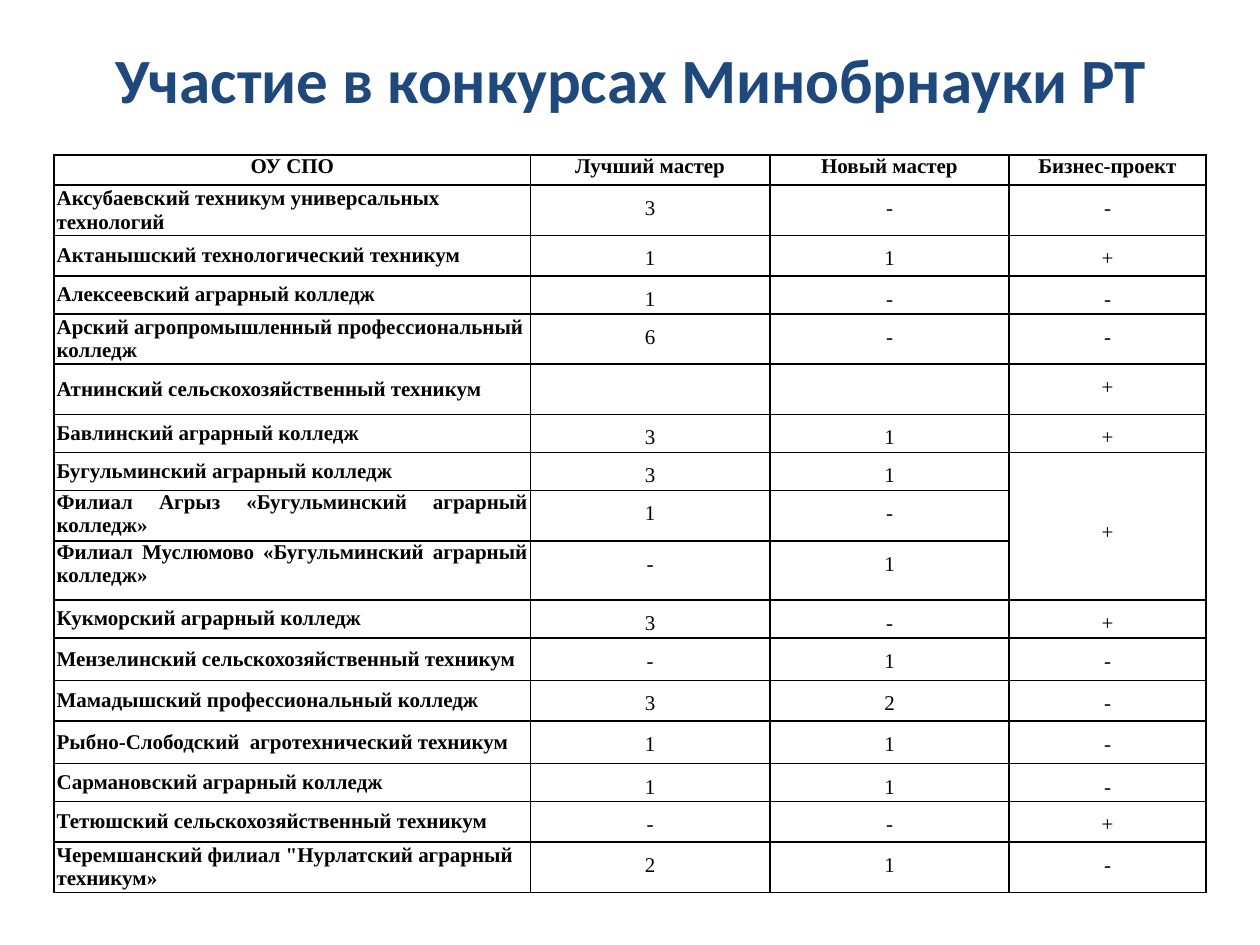
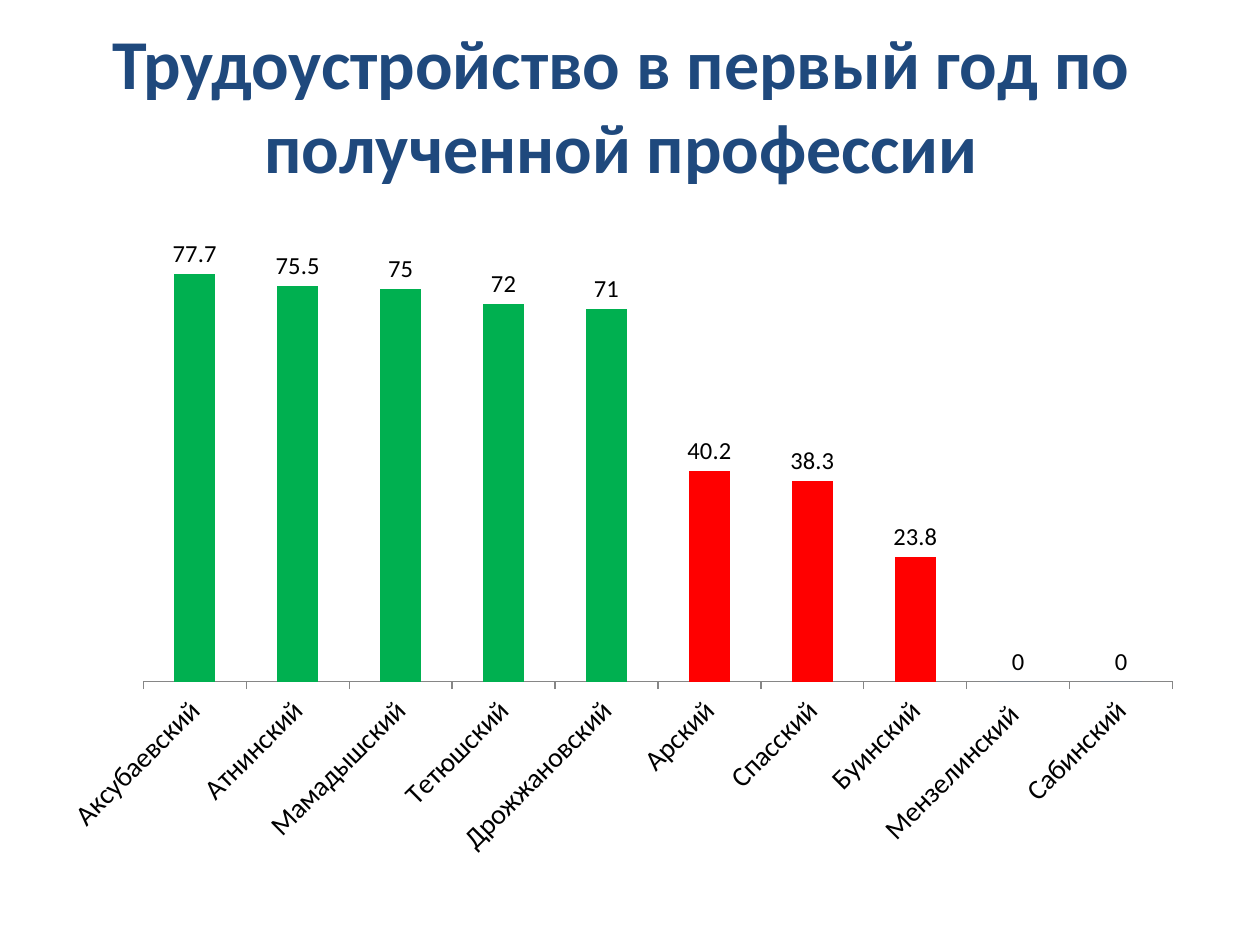
from lxml import etree
from pptx import Presentation
from pptx.chart.data import CategoryChartData
from pptx.dml.color import RGBColor
from pptx.enum.chart import XL_CHART_TYPE, XL_LABEL_POSITION, XL_TICK_MARK
from pptx.enum.text import MSO_ANCHOR, PP_ALIGN
from pptx.oxml.ns import qn
from pptx.util import Inches, Pt

COLUMN = XL_CHART_TYPE.COLUMN_CLUSTERED
OUTSIDE_END = XL_LABEL_POSITION.OUTSIDE_END
TICK_OUT, TICK_NONE = XL_TICK_MARK.OUTSIDE, XL_TICK_MARK.NONE
TOP, MIDDLE = MSO_ANCHOR.TOP, MSO_ANCHOR.MIDDLE
LEFT, CENTER, JUSTIFY = PP_ALIGN.LEFT, PP_ALIGN.CENTER, PP_ALIGN.JUSTIFY

TITLE_FONT, TABLE_FONT = "Calibri", "Times New Roman"
NAVY, BLACK, GREY = "1F497D", "000000", "868686"
BLUE, GREEN, RED = "4F81BD", "00B050", "FF0000"

COLUMN_WIDTHS = [3.78, 1.9, 1.9, 1.56]
HEADERS = ["ОУ СПО", "Лучший мастер", "Новый мастер", "Бизнес-проект"]
HEADER_HEIGHT = 0.24
# Row height, institution, then one result for each contest
CONTEST_ROWS = [
    (0.4, "Аксубаевский техникум универсальных технологий", "3", "-", "-"),
    (0.32, "Актанышский технологический техникум", "1", "1", "+"),
    (0.24, "Алексеевский аграрный колледж", "1", "-", "-"),
    (0.34, "Арский агропромышленный профессиональный колледж", "6", "-", "-"),
    (0.4, "Атнинский сельскохозяйственный техникум", "", "", "+"),
    (0.24, "Бавлинский аграрный колледж", "3", "1", "+"),
    (0.24, "Бугульминский аграрный колледж", "3", "1", "+"),
    (0.34, "Филиал Агрыз «Бугульминский аграрный колледж»", "1", "-", ""),
    (0.47, "Филиал Муслюмово «Бугульминский аграрный колледж»", "-", "1", ""),
    (0.24, "Кукморский аграрный колледж", "3", "-", "+"),
    (0.34, "Мензелинский сельскохозяйственный техникум", "-", "1", "-"),
    (0.32, "Мамадышский профессиональный колледж", "3", "2", "-"),
    (0.34, "Рыбно-Слободский  агротехнический техникум", "1", "1", "-"),
    (0.24, "Сармановский аграрный колледж", "1", "1", "-"),
    (0.32, "Тетюшский сельскохозяйственный техникум", "-", "-", "+"),
    (0.34, "Черемшанский филиал \"Нурлатский аграрный техникум»", "2", "1", "-"),
]
# First and last row of the project result shared by a college and its branches
SHARED_ROWS = (7, 9)

EMPLOYMENT = {
    "Аксубаевский": 77.7, "Атнинский": 75.5, "Мамадышский": 75,
    "Тетюшский": 72, "Дрожжановский": 71, "Арский": 40.2,
    "Спасский": 38.3, "Буинский": 23.8, "Мензелинский ": 0, "Сабинский": 0,
}
HIGH_EMPLOYMENT = 70


def color(value):
    return RGBColor.from_string(value)


def set_attributes(target, values):
    for name, value in values.items():
        setattr(target, name, value)


def set_font(font, name, size, value=BLACK, bold=False):
    set_attributes(font, {"name": name, "size": Pt(size), "bold": bold})
    font.color.rgb = color(value)


def add_title(slide, box, text, size):
    shape = slide.shapes.add_textbox(*map(Inches, box))
    set_attributes(shape.text_frame, {"word_wrap": True, "vertical_anchor": MIDDLE})
    paragraph = shape.text_frame.paragraphs[0]
    paragraph.alignment = CENTER
    run = paragraph.add_run()
    run.text = text
    set_font(run.font, TITLE_FONT, size, NAVY, True)


def add_borders(cell):
    properties = cell._tc.get_or_add_tcPr()
    for side in ("a:lnL", "a:lnR", "a:lnT", "a:lnB"):
        line = etree.SubElement(properties, qn(side), w=str(Pt(1)))
        fill = etree.SubElement(line, qn("a:solidFill"))
        etree.SubElement(fill, qn("a:srgbClr"), val=BLACK)


def format_cell(cell, text, alignment, anchor=TOP, bold=False, spacing=1.0):
    add_borders(cell)
    cell.fill.background()
    set_attributes(cell, {
        "margin_left": Inches(0.02), "margin_right": Inches(0.02),
        "margin_top": 0, "margin_bottom": 0, "vertical_anchor": anchor,
    })
    paragraph = cell.text_frame.paragraphs[0]
    set_attributes(paragraph, {"alignment": alignment, "line_spacing": spacing})
    set_font(paragraph.font, TABLE_FONT, 12)
    if text:
        run = paragraph.add_run()
        run.text = text
        set_font(run.font, TABLE_FONT, 12, BLACK, bold)


def add_contest_table(slide, left, top):
    heights = [HEADER_HEIGHT] + [row[0] for row in CONTEST_ROWS]
    table = slide.shapes.add_table(
        len(heights), len(HEADERS), Inches(left), Inches(top),
        Inches(sum(COLUMN_WIDTHS)), Inches(sum(heights))).table
    set_attributes(table, {"first_row": False, "horz_banding": False})
    for column, width in zip(table.columns, COLUMN_WIDTHS):
        column.width = Inches(width)
    for row, height in zip(table.rows, heights):
        row.height = Inches(height)

    # Header
    for index, header in enumerate(HEADERS):
        format_cell(table.cell(0, index), header, CENTER, bold=True)

    # Institutions and their results
    first, last = SHARED_ROWS
    for row, (_, institution, *results) in enumerate(CONTEST_ROWS, 1):
        branch = institution.startswith("Филиал")
        format_cell(table.cell(row, 0), institution, JUSTIFY if branch else LEFT,
                    TOP if branch else MIDDLE, bold=True)
        for index, result in enumerate(results, 1):
            shared = index == len(results) and first <= row <= last
            format_cell(table.cell(row, index), result, CENTER,
                        MIDDLE if shared else TOP, spacing=1.5)
    table.cell(first, len(HEADERS) - 1).merge(table.cell(last, len(HEADERS) - 1))


def add_employment_chart(slide, box):
    data = CategoryChartData()
    data.categories = list(EMPLOYMENT)
    data.add_series("Series 1", list(EMPLOYMENT.values()))
    chart = slide.shapes.add_chart(COLUMN, *map(Inches, box), data).chart
    set_attributes(chart, {"has_legend": False, "has_title": False})
    set_font(chart.font, TITLE_FONT, 10)

    # Axes
    chart.value_axis.visible = False
    chart.value_axis.has_major_gridlines = False
    axis = chart.category_axis
    set_attributes(axis, {"major_tick_mark": TICK_OUT, "minor_tick_mark": TICK_NONE})
    axis.format.line.color.rgb = color(GREY)
    set_font(axis.tick_labels.font, TITLE_FONT, 16)
    axis._element.find(qn("c:txPr")).find(qn("a:bodyPr")).set("rot", "-2700000")

    # Columns and their labels
    plot = chart.plots[0]
    set_attributes(plot, {"gap_width": 150, "vary_by_categories": False,
                          "has_data_labels": True})
    set_attributes(plot.data_labels, {
        "show_value": True, "position": OUTSIDE_END,
        "number_format": "General", "number_format_is_linked": False,
    })
    set_font(plot.data_labels.font, TITLE_FONT, 14)
    series = plot.series[0]
    series.format.fill.solid()
    series.format.fill.fore_color.rgb = color(BLUE)
    for index, value in enumerate(EMPLOYMENT.values()):
        if value:
            fill = series.points[index].format.fill
            fill.solid()
            fill.fore_color.rgb = color(GREEN if value > HIGH_EMPLOYMENT else RED)


def build_contest_slide(slide):
    add_title(slide, (0.51, 0, 9, 1.25), "Участие в конкурсах Минобрнауки РТ", 36)
    add_contest_table(slide, 0.43, 1.23)


def build_employment_slide(slide):
    add_title(slide, (0.43, 0.2, 9, 1.25),
              "Трудоустройство в первый год по полученной профессии", 40)
    add_employment_chart(slide, (0.36, 1.56, 9.13, 5.34))


def main():
    presentation = Presentation()
    set_attributes(presentation, {"slide_width": Inches(10), "slide_height": Inches(7.5)})
    blank = presentation.slide_layouts[6]
    for build in (build_contest_slide, build_employment_slide):
        build(presentation.slides.add_slide(blank))
    presentation.save("out.pptx")


if __name__ == "__main__":
    main()
